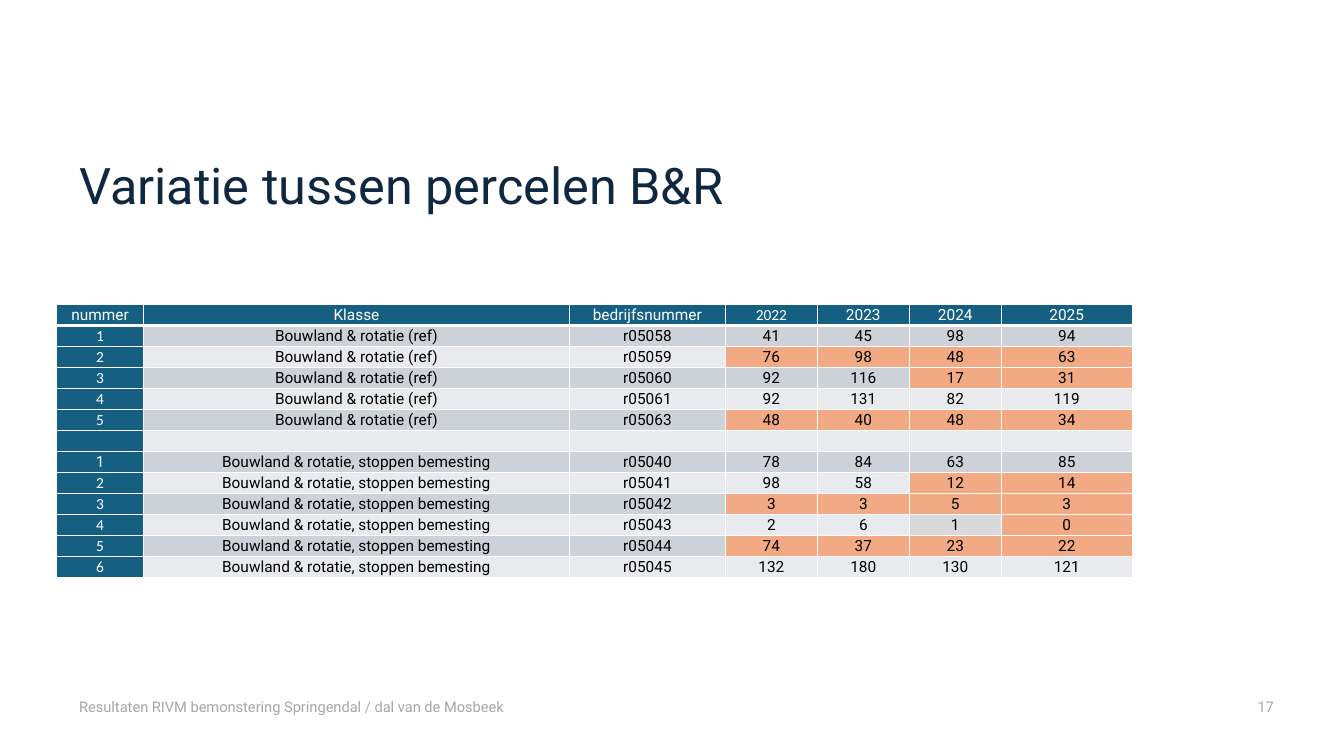
from typing import NamedTuple

from lxml.etree import SubElement
from pptx import Presentation
from pptx.dml.color import RGBColor
from pptx.enum.text import MSO_ANCHOR as Anchor, PP_ALIGN as Align
from pptx.oxml import parse_xml
from pptx.oxml.ns import nsdecls, qn
from pptx.slide import Slide
from pptx.table import _Cell as Cell
from pptx.util import Pt

WHITE = RGBColor(0xFF, 0xFF, 0xFF)
BLACK = RGBColor(0x00, 0x00, 0x00)
NAVY = RGBColor(0x0E, 0x28, 0x41)
TEAL = RGBColor(0x15, 0x60, 0x82)
BAND_DARK = RGBColor(0xCC, 0xD2, 0xD8)
BAND_LIGHT = RGBColor(0xE8, 0xEA, 0xED)
ORANGE = RGBColor(0xF2, 0xAA, 0x84)
GREY = RGBColor(0xD9, 0xD9, 0xD9)
FOOTER_GREY = RGBColor(0xA6, 0xA6, 0xA6)

ROBOTO, CALIBRI = "Roboto", "Calibri"
CELL_SIZE = 11
ROW_HEIGHT = 15
COLUMN_WIDTHS = (62, 304.3, 111.4, 65.7, 65.7, 65.7, 93.6)
HEADINGS = ("nummer", "Klasse", "bedrijfsnummer", "2022", "2023", "2024", "2025")
REFERENCE = "Bouwland & rotatie (ref)"
STOPPED = "Bouwland & rotatie, stoppen bemesting"


class Parcel(NamedTuple):
    farm: str
    values: tuple[int, int, int, int]
    orange_years: int = 0  # how many of the last years are marked
    grey_year: int | None = None  # position of a year marked grey


class Label(NamedTuple):
    text: str
    left: float
    top: float
    width: float
    height: float
    size: float
    color: RGBColor
    align: Align = Align.LEFT
    right_inset: float = 7.2
    line_spacing: float = 1.0


GROUPS = {
    REFERENCE: (
        Parcel("r05058", (41, 45, 98, 94)),
        Parcel("r05059", (76, 98, 48, 63), 4),
        Parcel("r05060", (92, 116, 17, 31), 2),
        Parcel("r05061", (92, 131, 82, 119)),
        Parcel("r05063", (48, 40, 48, 34), 4),
    ),
    STOPPED: (
        Parcel("r05040", (78, 84, 63, 85)),
        Parcel("r05041", (98, 58, 12, 14), 2),
        Parcel("r05042", (3, 3, 5, 3), 4),
        Parcel("r05043", (2, 6, 1, 0), 1, grey_year=2),
        Parcel("r05044", (74, 37, 23, 22), 4),
        Parcel("r05045", (132, 180, 130, 121)),
    ),
}
LABELS = (
    Label("Variatie tussen percelen B&R", 49.5, 82.8, 860.4, 74.9, 36, NAVY,
          line_spacing=0.9),
    Label("Resultaten RIVM bemonstering Springendal / dal van de Mosbeek",
          49.5, 489.6, 429.8, 25.2, 10.5, FOOTER_GREY),
    Label("17", 516.2, 489.6, 393.8, 25.2, 10.5, FOOTER_GREY, Align.RIGHT, 0),
)


def add_label(slide: Slide, label: Label) -> None:
    box = slide.shapes.add_textbox(
        Pt(label.left), Pt(label.top), Pt(label.width), Pt(label.height))
    frame = box.text_frame
    frame.word_wrap = True
    frame.vertical_anchor = Anchor.BOTTOM
    frame.margin_right = Pt(label.right_inset)
    paragraph = frame.paragraphs[0]
    paragraph.alignment = label.align
    paragraph.line_spacing = label.line_spacing
    run = paragraph.add_run()
    run.text = label.text
    run.font.name = ROBOTO
    run.font.size = Pt(label.size)
    run.font.color.rgb = label.color


def add_borders(cell: Cell, bottom: float) -> None:
    """Put white borders before the fill, as the schema orders them."""
    properties = cell._tc.get_or_add_tcPr()
    for position, side in enumerate("LRTB"):
        width = Pt(bottom if side == "B" else 1)
        properties.insert(position, parse_xml(
            f'<a:ln{side} {nsdecls("a")} w="{width}"><a:solidFill>'
            f'<a:srgbClr val="{WHITE}"/></a:solidFill></a:ln{side}>'))


def fill_cell(cell: Cell, text: str, fill: RGBColor, color: RGBColor = BLACK,
              font: str = ROBOTO, bottom: float = 1) -> None:
    cell.fill.solid()
    cell.fill.fore_color.rgb = fill
    add_borders(cell, bottom)
    cell.vertical_anchor = Anchor.MIDDLE
    cell.margin_left = cell.margin_right = Pt(3.6)
    cell.margin_top = cell.margin_bottom = Pt(0)
    paragraph = cell.text_frame.paragraphs[0]
    paragraph.alignment = Align.CENTER
    paragraph.line_spacing = 1.07
    paragraph.space_after = Pt(8)
    if not text:
        # An empty cell takes its height from the end-of-paragraph size.
        SubElement(paragraph._p, qn("a:endParaRPr"), sz=str(CELL_SIZE * 100))
        return
    run = paragraph.add_run()
    run.text = text
    run.font.name = font
    run.font.size = Pt(CELL_SIZE)
    run.font.color.rgb = color


def year_fill(parcel: Parcel, year: int, band: RGBColor) -> RGBColor:
    if year == parcel.grey_year:
        return GREY
    return ORANGE if year >= len(parcel.values) - parcel.orange_years else band


def add_parcel_table(slide: Slide) -> None:
    rows: list[tuple[int, str, Parcel] | None] = []
    for group, parcels in GROUPS.items():
        if rows:
            rows.append(None)
        rows += [(number, group, parcel) for number, parcel in enumerate(parcels, 1)]

    row_count = len(rows) + 1
    table = slide.shapes.add_table(
        row_count, len(HEADINGS), Pt(40.5), Pt(217.5),
        Pt(sum(COLUMN_WIDTHS)), Pt(ROW_HEIGHT * row_count)).table
    table.first_row = table.horz_banding = False
    for column, width in zip(table.columns, COLUMN_WIDTHS):
        column.width = Pt(width)
    for row in table.rows:
        row.height = Pt(ROW_HEIGHT)

    for column, heading in enumerate(HEADINGS):
        font = CALIBRI if heading == "2022" else ROBOTO
        fill_cell(table.cell(0, column), heading, TEAL, WHITE, font, bottom=3)

    for index, entry in enumerate(rows, 1):
        band = BAND_DARK if index % 2 else BAND_LIGHT
        if entry is None:
            for column in range(len(HEADINGS)):
                fill_cell(table.cell(index, column), "", band if column else TEAL)
            continue
        number, group, parcel = entry
        number_font = ROBOTO if (group, number) == (STOPPED, 1) else CALIBRI
        fill_cell(table.cell(index, 0), str(number), TEAL, WHITE, number_font)
        fill_cell(table.cell(index, 1), group, band)
        fill_cell(table.cell(index, 2), parcel.farm, band)
        for year, value in enumerate(parcel.values):
            fill_cell(table.cell(index, 3 + year), str(value),
                      year_fill(parcel, year, band))


def main() -> None:
    deck = Presentation()
    deck.slide_width, deck.slide_height = Pt(960), Pt(540)
    slide = deck.slides.add_slide(deck.slide_layouts[6])
    add_parcel_table(slide)
    for label in LABELS:
        add_label(slide, label)
    deck.save("out.pptx")


if __name__ == "__main__":
    main()
